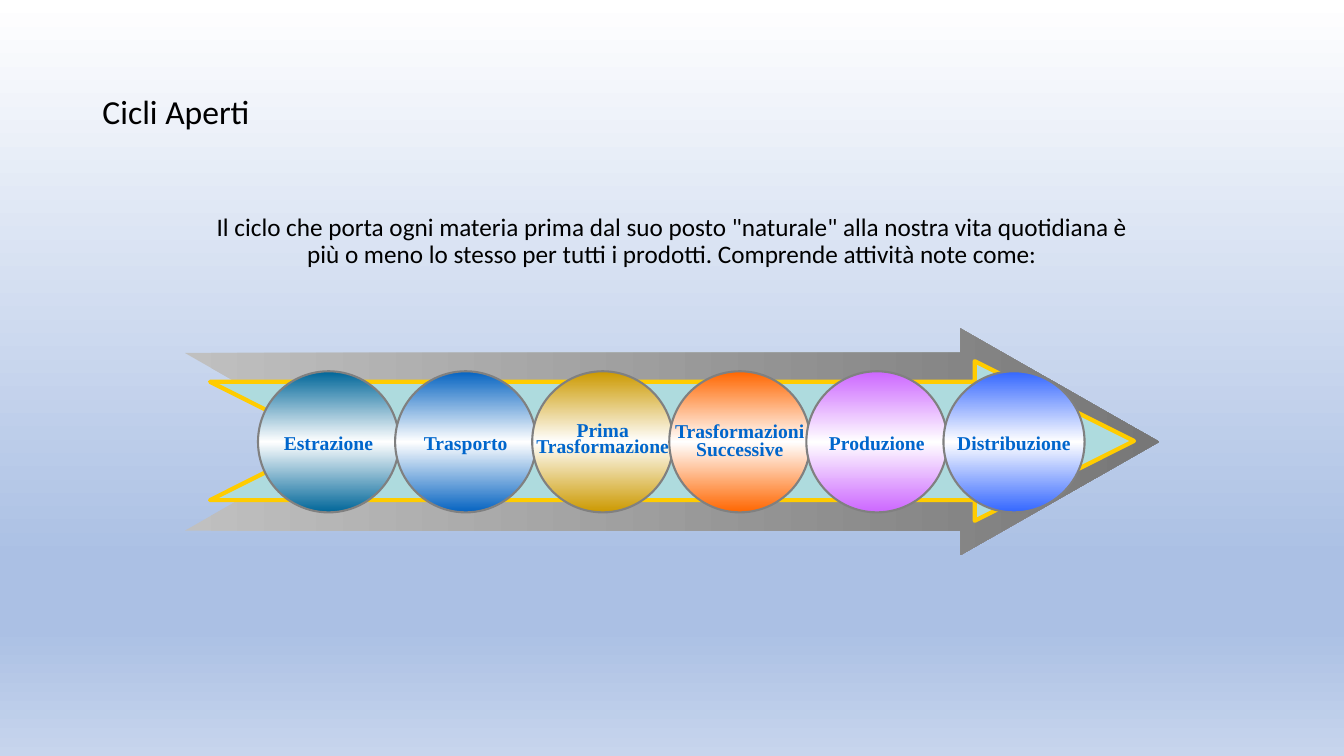
import copy
from dataclasses import dataclass

import pptx
import pptx.dml.color
import pptx.dml.fill
import pptx.enum.shapes
import pptx.enum.text
import pptx.oxml.ns
import pptx.shapes.autoshape
import pptx.text.text
import pptx.util

RGB = pptx.dml.color.RGBColor
KIND = pptx.enum.shapes.MSO_SHAPE
ALIGN = pptx.enum.text.PP_ALIGN
MID = pptx.enum.text.MSO_ANCHOR.MIDDLE
TOP = pptx.enum.text.MSO_ANCHOR.TOP

BLACK = RGB(0x00, 0x00, 0x00)
WHITE = RGB(0xFF, 0xFF, 0xFF)
SKY = RGB(0xAB, 0xC0, 0xE4)
HAZE = RGB(0xC7, 0xD5, 0xED)
SILVER = RGB(0xC0, 0xC0, 0xC0)
SLATE = RGB(0x77, 0x77, 0x77)
GREY = RGB(0x80, 0x80, 0x80)
AQUA = RGB(0xAE, 0xDB, 0xDE)
GOLD = RGB(0xFF, 0xCC, 0x00)
INK = RGB(0x00, 0x66, 0xCC)
TEAL = RGB(0x00, 0x66, 0x99)
BLUE = RGB(0x05, 0x63, 0xC1)
OCHRE = RGB(0xCC, 0x99, 0x00)
ORANGE = RGB(0xFF, 0x66, 0x00)
VIOLET = RGB(0xCC, 0x66, 0xFF)
ROYAL = RGB(0x33, 0x66, 0xFF)

WIDE = pptx.util.Inches(13.333)
HIGH = pptx.util.Inches(7.5)
COLS, ROWS = 160, 90
FIRST, PITCH, SIZE, BALL_TOP = 30.72, 16.32, 16.8, 44.2


@dataclass(frozen=True)
class Box:
    col: float
    row: float
    cols: float
    rows: float

    def place(self) -> tuple[int, int, int, int]:
        return (
            round(WIDE * self.col / COLS),
            round(HIGH * self.row / ROWS),
            round(WIDE * self.cols / COLS),
            round(HIGH * self.rows / ROWS),
        )


@dataclass(frozen=True)
class Style:
    font: str
    size: int
    color: RGB
    align: ALIGN
    bold: bool = False


@dataclass(frozen=True)
class Stage:
    lines: tuple[str, ...]
    color: RGB
    space: float = 1.1
    gap: int = 0


HEAD = Style("Calibri", 24, BLACK, ALIGN.LEFT)
BODY = Style("Calibri", 18, BLACK, ALIGN.CENTER)
LABEL = Style("Times New Roman", 14, INK, ALIGN.CENTER, True)

STAGES = (
    Stage(("Estrazione",), TEAL),
    Stage(("Trasporto",), BLUE),
    Stage(("Prima", "Trasformazione"), OCHRE, 0.5, 3),
    Stage(("Trasformazioni", "Successive"), ORANGE, 0.8),
    Stage(("Produzione",), VIOLET),
    Stage(("Distribuzione",), ROYAL),
)


def blend(fill: pptx.dml.fill.FillFormat, root, angle: int, *stops: tuple[int, RGB]) -> None:
    fill.gradient()
    fill.gradient_angle = -angle % 360
    marks = root.find(".//" + pptx.oxml.ns.qn("a:gsLst"))
    for _ in stops[2:]:
        marks.append(copy.deepcopy(marks[-1]))
    for mark, (share, color) in zip(fill.gradient_stops, stops):
        mark.position = share / 100
        mark.color.rgb = color


def write(frame: pptx.text.text.TextFrame, lines: tuple[str, ...], style: Style,
          space: float, gap: int = 0) -> None:
    for rank, line in enumerate(lines):
        para = frame.add_paragraph() if rank else frame.paragraphs[0]
        para.text = line
        para.alignment = style.align
        para.line_spacing = space
        para.space_before = pptx.util.Pt(gap if rank else 0)
        para.font.name = style.font
        para.font.size = pptx.util.Pt(style.size)
        para.font.bold = style.bold
        para.font.color.rgb = style.color


def draw(group, kind: KIND, box: Box) -> pptx.shapes.autoshape.Shape:
    shape = group.shapes.add_shape(kind, *box.place())
    shape.shadow.inherit = False
    return shape


def edge(shape: pptx.shapes.autoshape.Shape, color: RGB, width: float) -> None:
    shape.line.color.rgb = color
    shape.line.width = pptx.util.Pt(width)


def arrow(group, box: Box, shaft: float, point: float) -> pptx.shapes.autoshape.Shape:
    shape = draw(group, KIND.NOTCHED_RIGHT_ARROW, box)
    shape.adjustments[0] = shaft
    shape.adjustments[1] = point
    return shape


def ball(group, rank: int, stage: Stage) -> None:
    shape = draw(group, KIND.OVAL, Box(FIRST + rank * PITCH, BALL_TOP, SIZE, SIZE))
    blend(shape.fill, shape._element, 90, (0, stage.color), (50, WHITE), (100, stage.color))
    edge(shape, GREY, 1.5)
    frame = shape.text_frame
    frame.word_wrap = False
    frame.vertical_anchor = MID
    write(frame, stage.lines, LABEL, stage.space, stage.gap)


def main() -> None:
    deck = pptx.Presentation()
    deck.slide_width, deck.slide_height = WIDE, HIGH
    slide = deck.slides.add_slide(deck.slide_layouts[5])
    blend(slide.background.fill, slide._element, 90,
          (0, WHITE), (74, SKY), (83, SKY), (100, HAZE))

    title = slide.shapes.title
    title.left, title.top, title.width, title.height = Box(11, 4.8, 138, 17.4).place()
    title.text_frame.vertical_anchor = MID
    write(title.text_frame, ("Cicli Aperti",), HEAD, 0.9)

    intro = slide.shapes.add_textbox(*Box(23, 25, 114, 45).place()).text_frame
    intro.word_wrap = True
    intro.vertical_anchor = TOP
    write(intro, (
        'Il ciclo che porta ogni materia prima dal suo posto "naturale" alla nostra vita '
        "quotidiana è più o meno lo stesso per tutti i prodotti. "
        "Comprende attività note come:",
    ), BODY, 0.9)

    group = slide.shapes.add_group_shape()
    outer = arrow(group, Box(22, 39.1, 116, 27), 0.784, 0.877)
    blend(outer.fill, outer._element, 0, (0, SILVER), (100, SLATE))
    outer.line.fill.background()
    inner = arrow(group, Box(25, 43, 110, 19), 0.741, 0.998)
    inner.fill.solid()
    inner.fill.fore_color.rgb = AQUA
    edge(inner, GOLD, 3)
    for rank, stage in enumerate(STAGES):
        ball(group, rank, stage)

    deck.save("out.pptx")


if __name__ == "__main__":
    main()
